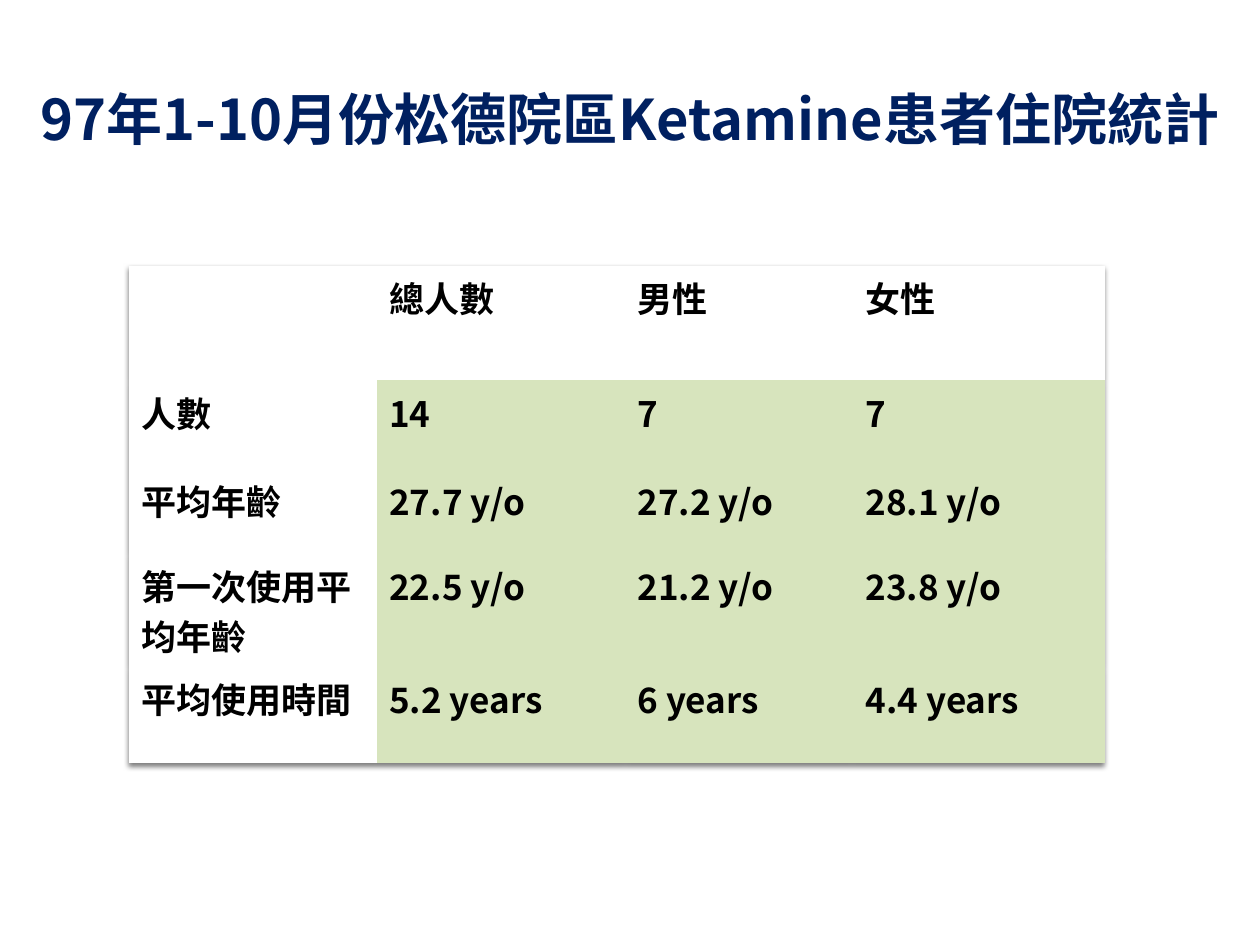
from lxml import etree
from pptx import Presentation
from pptx.dml.color import RGBColor
from pptx.enum.text import MSO_ANCHOR, PP_ALIGN
from pptx.oxml import parse_xml
from pptx.oxml.ns import qn
from pptx.util import Inches, Pt

MID = MSO_ANCHOR.MIDDLE
CENTER = PP_ALIGN.CENTER
FONT = "Noto Sans CJK SC"
NAVY, BLACK, WHITE, GREEN = "002060", "000000", "FFFFFF", "D7E4BD"
NO_GRID = "{2D5ABB26-0587-4C30-8999-92F81FD0307C}"
SHADOW = (
    '<a:effectLst xmlns:a="http://schemas.openxmlformats.org/drawingml/2006/main">'
    '<a:outerShdw blurRad="40000" dist="23000" dir="5400000" rotWithShape="0">'
    '<a:srgbClr val="000000"><a:alpha val="50000"/></a:srgbClr>'
    '</a:outerShdw></a:effectLst>'
)

COLS = [1.97, 1.97, 1.81, 2]
ROWS = [0.91, 0.7, 0.67, 0.9, 0.77]
DATA = [
    ["", "總人數", "男性", "女性"],
    ["人數", "14", "7", "7"],
    ["平均年齡", "27.7 y/o", "27.2 y/o", "28.1 y/o"],
    ["第一次使用平均年齡", "22.5 y/o", "21.2 y/o", "23.8 y/o"],
    ["平均使用時間", "5.2 years", "6 years", "4.4 years"],
]


def color(code):
    return RGBColor.from_string(code)


def style(frame, size, code):
    """Format every run, for Latin and East Asian letters alike."""
    for par in frame.paragraphs:
        for run in par.runs:
            font = run.font
            font.name, font.size, font.bold = FONT, Pt(size), True
            font.color.rgb = color(code)
            face = etree.SubElement(run._r.get_or_add_rPr(), qn("a:ea"))
            face.set("typeface", FONT)


def add_title(slide, text, top, width, height):
    box = slide.shapes.add_textbox(0, Inches(top), width, Inches(height))
    frame = box.text_frame
    frame.word_wrap = True
    frame.vertical_anchor = MID
    frame.text = text
    frame.paragraphs[0].alignment = CENTER
    style(frame, 32, NAVY)


def add_stats(slide, left, top):
    frame = slide.shapes.add_table(
        len(ROWS), len(COLS), Inches(left), Inches(top),
        Inches(sum(COLS)), Inches(sum(ROWS)))
    table = frame.table
    for col, width in zip(table.columns, COLS):
        col.width = Inches(width)
    for row, height in zip(table.rows, ROWS):
        row.height = Inches(height)

    # Plain table style with a soft shadow
    table.horz_banding = table.first_row = False
    props = table._tbl.tblPr
    props.find(qn("a:tableStyleId")).text = NO_GRID
    props.insert(0, parse_xml(SHADOW))

    # White header row and label column, green values
    for r, line in enumerate(DATA):
        for c, text in enumerate(line):
            cell = table.cell(r, c)
            cell.fill.solid()
            cell.fill.fore_color.rgb = color(GREEN if r and c else WHITE)
            cell.text_frame.text = text
            style(cell.text_frame, 20, BLACK)


def main():
    deck = Presentation()
    deck.slide_width, deck.slide_height = Inches(10), Inches(7.5)
    slide = deck.slides.add_slide(deck.slide_layouts[6])
    add_title(slide, "97年1-10月份松德院區Ketamine患者住院統計",
              0.23, deck.slide_width, 1.42)
    add_stats(slide, 1.02, 2.11)
    deck.save("out.pptx")


if __name__ == "__main__":
    main()
